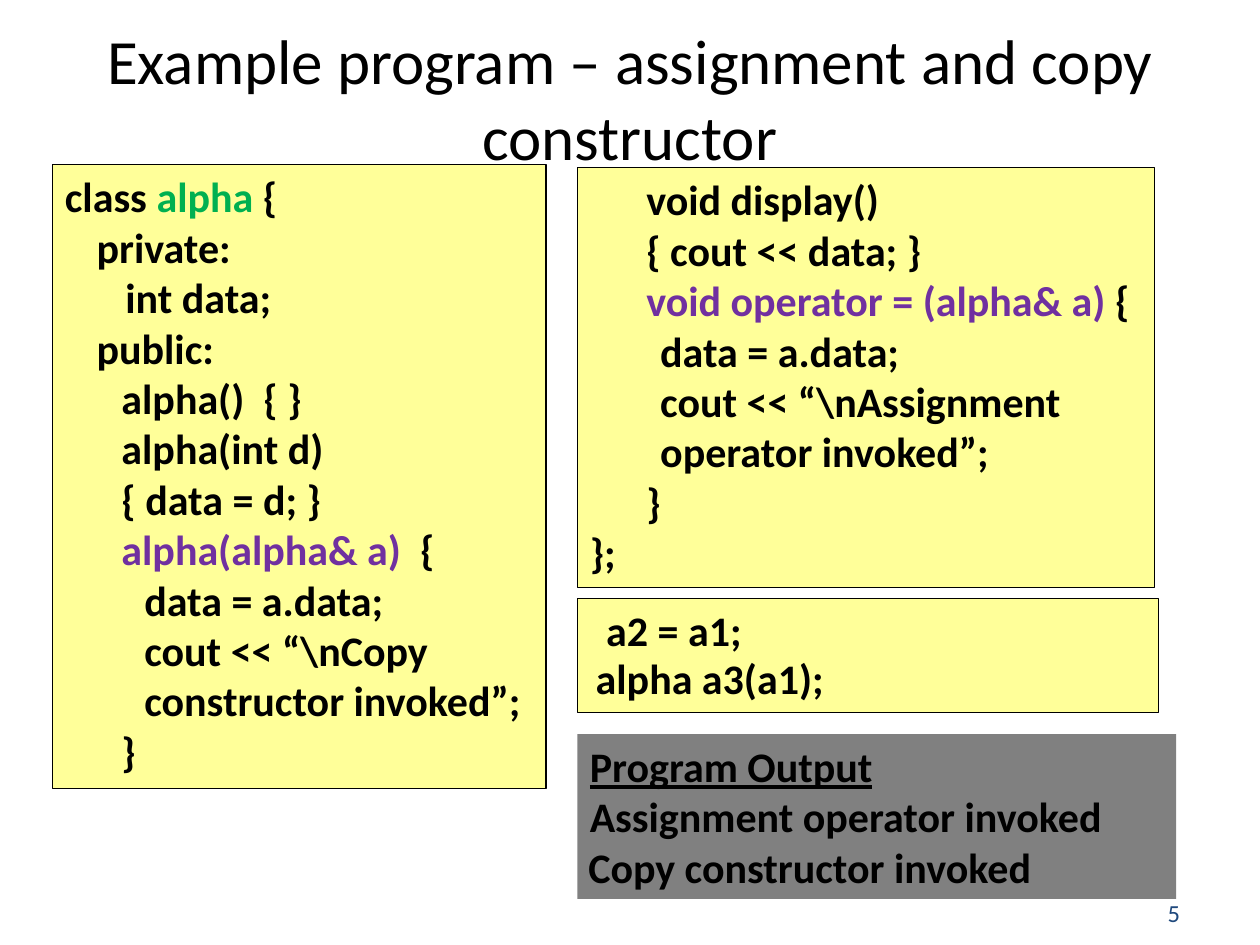
import dataclasses

import lxml.etree
import pptx
import pptx.dml.color
import pptx.enum.shapes
import pptx.enum.text
import pptx.oxml.ns
import pptx.util

Cm = pptx.util.Cm
Align = pptx.enum.text.PP_ALIGN
Anchor = pptx.enum.text.MSO_ANCHOR


@dataclasses.dataclass(frozen=True)
class Theme:
    font: str = "Calibri"
    ink: str = "000000"
    class_name: str = "00B050"
    signature: str = "7030A0"
    page: str = "1F497D"
    code_fill: str = "FFFF00"
    code_opacity: int = 40
    output_fill: str = "808080"
    title_size: int = 36
    code_size: int = 24
    page_size: int = 14
    border: float = 0.75


@dataclasses.dataclass(frozen=True)
class Run:
    text: str
    color: str = Theme.ink
    underline: bool = False


class SlideBuilder:
    def __init__(self, presentation, theme):
        self.theme = theme
        self.slide = presentation.slides.add_slide(presentation.slide_layouts[6])

    def fill_text(self, shape, lines, size, bold=True, align=Align.LEFT, anchor=Anchor.TOP):
        frame = shape.text_frame
        frame.word_wrap = True
        frame.vertical_anchor = anchor
        for index, (indent, *runs) in enumerate(lines):
            paragraph = frame.paragraphs[0] if index == 0 else frame.add_paragraph()
            paragraph.alignment = align
            properties = paragraph._p.get_or_add_pPr()
            properties.set("marL", str(Cm(indent)))
            properties.set("indent", "0")
            for part in runs:
                part = Run(part) if isinstance(part, str) else part
                run = paragraph.add_run()
                run.text = part.text
                run.font.name = self.theme.font
                run.font.size = pptx.util.Pt(size)
                run.font.bold = bold
                run.font.underline = part.underline
                run.font.color.rgb = pptx.dml.color.RGBColor.from_string(part.color)

    def add_text(self, box, lines, size=Theme.code_size, **style):
        shape = self.slide.shapes.add_textbox(*map(Cm, box))
        self.fill_text(shape, lines, size, **style)

    def add_panel(self, box, lines, fill):
        shape = self.slide.shapes.add_shape(
            pptx.enum.shapes.MSO_SHAPE.RECTANGLE, *map(Cm, box)
        )
        shape.shadow.inherit = False
        shape.fill.solid()
        shape.fill.fore_color.rgb = pptx.dml.color.RGBColor.from_string(fill)
        shape.line.fill.background()
        self.fill_text(shape, lines, self.theme.code_size)
        return shape

    def add_code(self, box, lines):
        shape = self.add_panel(box, lines, self.theme.code_fill)
        shape.line.color.rgb = pptx.dml.color.RGBColor.from_string(self.theme.ink)
        shape.line.width = pptx.util.Pt(self.theme.border)
        qn = pptx.oxml.ns.qn
        color = shape._element.spPr.find(qn("a:solidFill")).find(qn("a:srgbClr"))
        alpha = lxml.etree.SubElement(color, qn("a:alpha"))
        alpha.set("val", str(self.theme.code_opacity * 1000))


def main():
    presentation = pptx.Presentation()
    presentation.slide_width = Cm(25.4)
    presentation.slide_height = Cm(19.05)
    theme = Theme()
    builder = SlideBuilder(presentation, theme)

    section, field, member, body = 0.64, 1.22, 1.14, 1.6
    operator_body, statement = 1.42, 0.33
    right_column = 11.64

    builder.add_text(
        (23.29, 17.98, 1.7, 0.84), [(0, Run("5", theme.page))],
        size=theme.page_size, bold=False, anchor=Anchor.MIDDLE,
    )
    builder.add_text(
        (1.27, 0.97, 22.86, 1.98),
        [(0, "Example program – assignment and copy constructor")],
        size=theme.title_size, bold=False, align=Align.CENTER, anchor=Anchor.MIDDLE,
    )
    builder.add_code((1.06, 3.32, 9.95, 12.57), [
        (0, "class ", Run("alpha", theme.class_name), " {"),
        (section, "private:"),
        (field, "int data;"),
        (section, "public:"),
        (member, "alpha()  { }"),
        (member, "alpha(int d)"),
        (member, "{ data = d; }"),
        (member, Run("alpha(alpha& a)  ", theme.signature), "{"),
        (body, "data = a.data;"),
        (body, "cout << “\\nCopy constructor invoked”;"),
        (member, "}"),
    ])
    builder.add_code((right_column, 3.38, 11.64, 8.46), [
        (member, "void display()"),
        (member, "{ cout << data; }"),
        (member, Run("void operator = (alpha& a) ", theme.signature), "{"),
        (operator_body, "data = a.data;"),
        (operator_body, "cout << “\\nAssignment operator invoked”;"),
        (member, "}"),
        (0, "};"),
    ])
    builder.add_code((right_column, 12.07, 11.71, 2.3), [(statement, "a2 = a1;")])
    builder.add_text((11.43, 13.03, 8.89, 1.27), [(statement, "alpha a3(a1);")])
    builder.add_panel((right_column, 14.8, 12.07, 3.32), [
        (0, Run("Program Output", underline=True)),
        (0, "Assignment operator invoked"),
    ], theme.output_fill)
    builder.add_text((11.61, 16.84, 12.07, 1.27), [(0, "Copy constructor invoked")])

    presentation.save("out.pptx")


if __name__ == "__main__":
    main()
